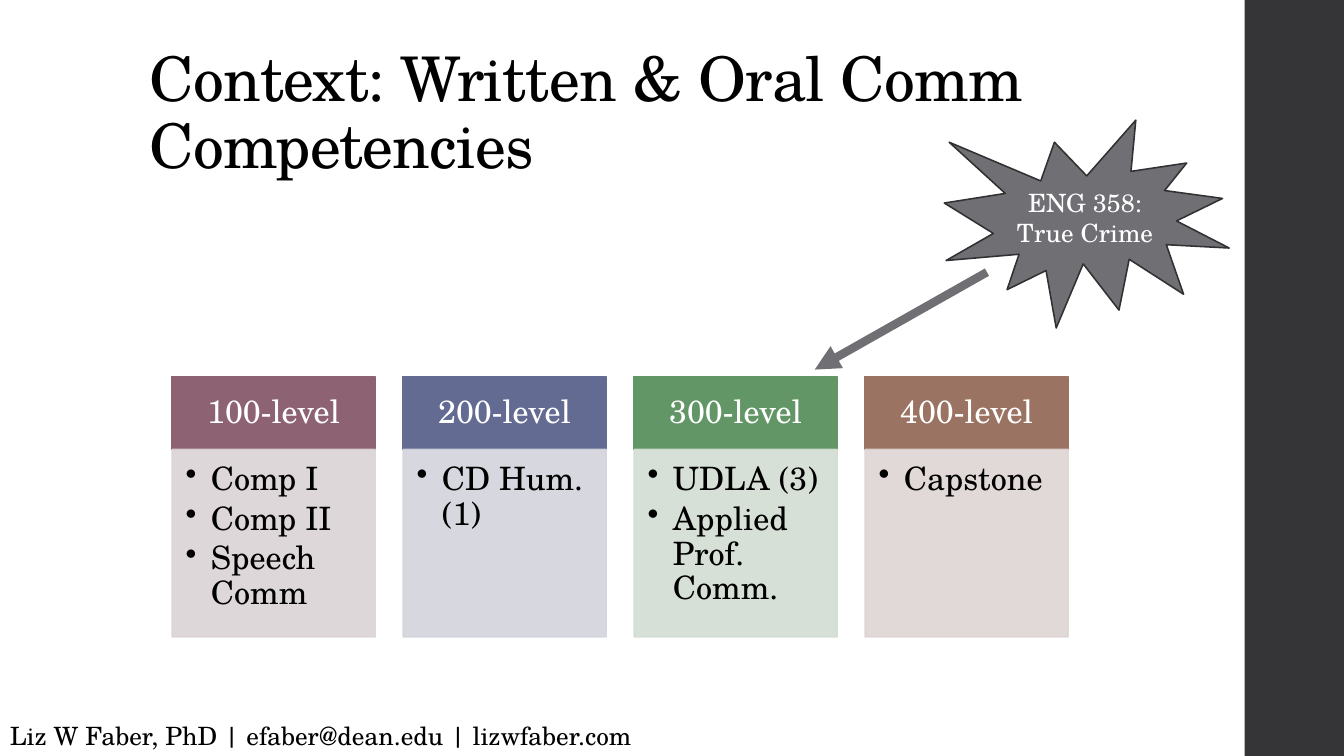
from lxml.etree import SubElement
from pptx import Presentation
from pptx.dml.color import RGBColor
from pptx.enum.shapes import MSO_CONNECTOR, MSO_SHAPE
from pptx.enum.text import MSO_ANCHOR, PP_ALIGN
from pptx.oxml.ns import qn
from pptx.util import Pt

# Content
FONT = "TeX Gyre Schola"
TITLE = "Context: Written & Oral Comm Competencies"
FOOTER = "Liz W Faber, PhD | efaber@dean.edu | lizwfaber.com"
COURSE = "ENG 358: True Crime"
LEVELS = [  # heading, heading colour, body colour, courses
    ("100-level", "8D6374", "DBD3D6", ["Comp I", "Comp II", "Speech Comm"]),
    ("200-level", "636B92", "D3D4DC", ["CD Hum. (1)"]),
    ("300-level", "629666", "D3DDD3", ["UDLA (3)", "Applied Prof. Comm."]),
    ("400-level", "9B7362", "DED5D3", ["Capstone"]),
]
BLACK, WHITE, GREY = "000000", "FFFFFF", "6F6F74"

# Layout in points
COL_LEFT, COL_STEP, COL_W = 123, 165, 145
HEAD_TOP, HEAD_H, BODY_H = 269, 52, 134


def rgb(value):
    return RGBColor.from_string(value)


def place(sp, left, top, width, height):
    sp.left, sp.top, sp.width, sp.height = Pt(left), Pt(top), Pt(width), Pt(height)


def set_insets(tf, left, top, right, bottom):
    tf.margin_left, tf.margin_top = Pt(left), Pt(top)
    tf.margin_right, tf.margin_bottom = Pt(right), Pt(bottom)


def set_alpha(fill_parent, percent):
    color = fill_parent.find(qn("a:solidFill"))[0]
    SubElement(color, qn("a:alpha"), val=str(percent * 1000))


def add_block(kind, box, fill, line=None, alpha=None):
    sp = s.shapes.add_shape(kind, *map(Pt, box))
    sp.shadow.inherit = False
    sp.fill.solid()
    sp.fill.fore_color.rgb = rgb(fill)
    if line:
        sp.line.color.rgb = rgb(line)
        sp.line.width = Pt(1.1)
    else:
        sp.line.fill.background()
    if alpha:
        spPr = sp._element.spPr
        set_alpha(spPr, alpha)
        set_alpha(spPr.find(qn("a:ln")), alpha)
    return sp


def write(p, text, size, color, align=PP_ALIGN.LEFT, spacing=None, after=0):
    p.alignment = align
    p.line_spacing = spacing
    p.space_after = Pt(after)
    r = p.add_run()
    r.text = text
    r.font.name, r.font.size = FONT, Pt(size)
    r.font.color.rgb = rgb(color)
    return r


def add_bullet(p, indent):
    pPr = p._p.get_or_add_pPr()
    pPr.set("marL", str(Pt(indent)))
    pPr.set("indent", str(-Pt(indent)))
    SubElement(pPr, qn("a:buChar"), char="•")


prs = Presentation()
prs.slide_width, prs.slide_height = Pt(960), Pt(540)
s = prs.slides.add_slide(prs.slide_layouts[5])

# Side band
add_block(MSO_SHAPE.RECTANGLE, (889, 0, 72, 540), "353537")

# Title
title = s.shapes.title
place(title, 99.5, 28.8, 763, 104.4)
tf = title.text_frame
tf.word_wrap = True
tf.vertical_anchor = MSO_ANCHOR.BOTTOM
r = write(tf.paragraphs[0], TITLE, 44, BLACK, spacing=0.9)
r.font._element.set("spc", "-50")

# Level columns: heading above a bulleted course list
for i, (level, dark, pale, courses) in enumerate(LEVELS):
    left = COL_LEFT + i * COL_STEP
    head = add_block(MSO_SHAPE.RECTANGLE, (left, HEAD_TOP, COL_W, HEAD_H), dark, dark)
    tf = head.text_frame
    tf.word_wrap = True
    tf.vertical_anchor = MSO_ANCHOR.MIDDLE
    set_insets(tf, 13, 7.4, 13, 7.4)
    write(tf.paragraphs[0], level, 23, WHITE, PP_ALIGN.CENTER, 0.9)

    body = add_block(MSO_SHAPE.RECTANGLE, (left, HEAD_TOP + HEAD_H, COL_W, BODY_H),
                     pale, pale, alpha=90)
    tf = body.text_frame
    tf.word_wrap = True
    tf.vertical_anchor = MSO_ANCHOR.TOP
    set_insets(tf, 9.6, 9.6, 13, 14.4)
    for j, course in enumerate(courses):
        p = tf.add_paragraph() if j else tf.paragraphs[0]
        add_bullet(p, 18)
        write(p, course, 23, BLACK, spacing=0.9, after=3.45)

# Arrow from the course to the 300 level
arrow = s.shapes.add_connector(MSO_CONNECTOR.STRAIGHT, Pt(705), Pt(194.4), Pt(582), Pt(264))
arrow.line.color.rgb = rgb(GREY)
arrow.line.width = Pt(6)
SubElement(arrow.line._get_or_add_ln(), qn("a:tailEnd"), type="triangle")
SubElement(arrow._element.spPr, qn("a:effectLst"))

# Course starburst
burst = add_block(MSO_SHAPE.EXPLOSION1, (674.5, 85.8, 203.5, 148.5), GREY, "313133")
tf = burst.text_frame
tf.word_wrap = True
tf.vertical_anchor = MSO_ANCHOR.MIDDLE
write(tf.paragraphs[0], COURSE, 18, WHITE, PP_ALIGN.CENTER)

# Footer
footer = s.shapes.add_textbox(Pt(0), Pt(511), Pt(500), Pt(29))
footer.text_frame.word_wrap = True
write(footer.text_frame.paragraphs[0], FOOTER, 18, BLACK)

prs.save("out.pptx")
